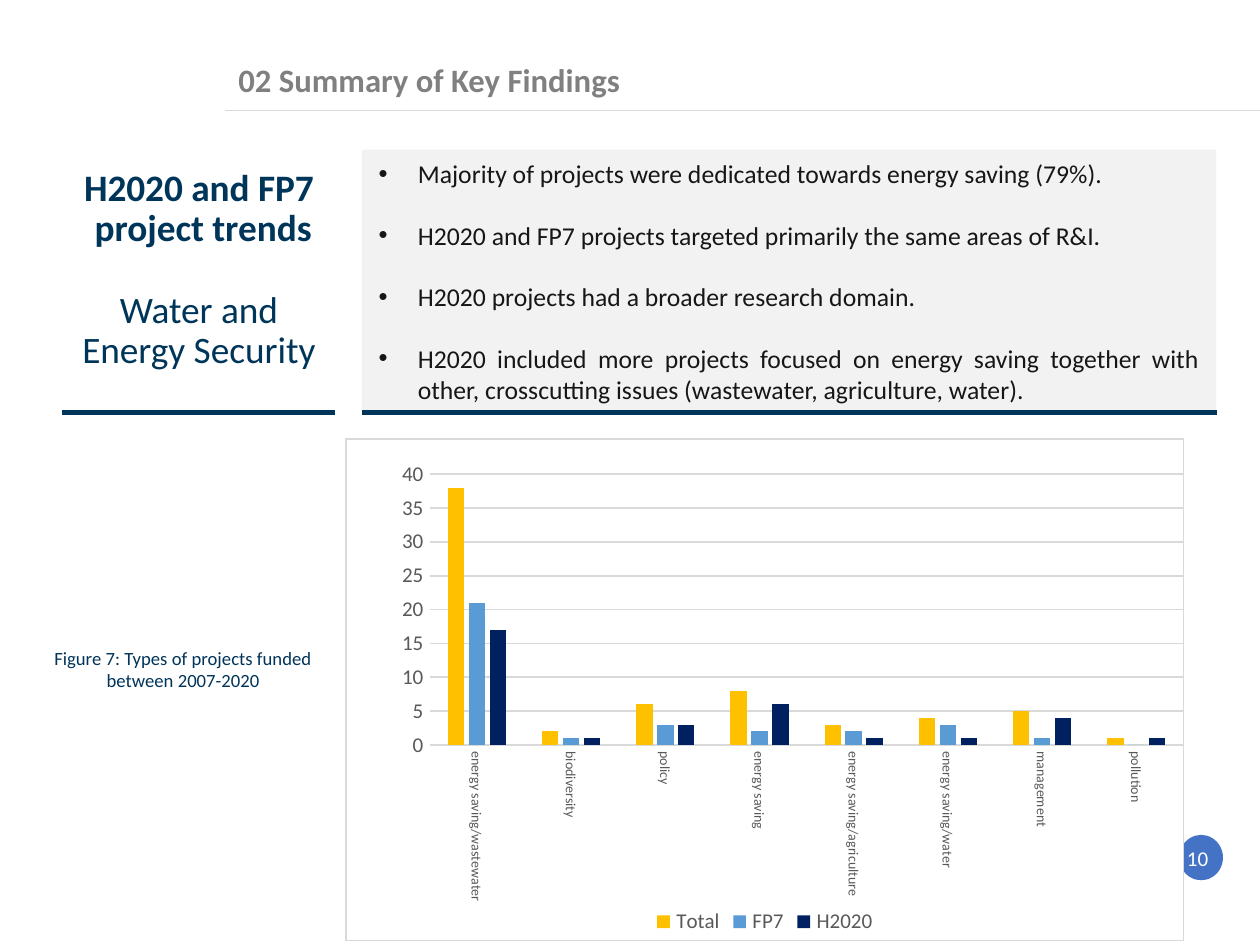
import pptx
import pptx.chart.data
import pptx.dml.color
import pptx.enum.chart
import pptx.enum.shapes
import pptx.enum.text
import pptx.oxml
import pptx.oxml.ns
import pptx.util
import lxml.etree

ALIGN = pptx.enum.text.PP_ALIGN
ANCHOR = pptx.enum.text.MSO_ANCHOR
SHAPE = pptx.enum.shapes.MSO_SHAPE
TICK = pptx.enum.chart.XL_TICK_MARK
qn = pptx.oxml.ns.qn

NAVY, GREY, RULE, INK = "00355A", "808080", "D9D9D9", "595959"
NAMESPACES = pptx.oxml.ns.nsdecls("a", "c")


def colour(value):
    return pptx.dml.color.RGBColor.from_string(value)


def cells(count):
    """Length of a number of grid cells, ten to the inch."""
    return pptx.util.Inches(count / 10)


def apply(target, values):
    for name, value in values.items():
        setattr(target, name, value)


class Page:
    """The current slide, its typeface and its grid of 75 columns."""

    typeface = "Calibri"

    def __init__(self, deck):
        self.slide = deck.slides.add_slide(deck.slide_layouts[6])
        self.shapes = self.slide.shapes

    def style_font(self, font, size, hex_colour, bold=False):
        apply(font, {"name": self.typeface, "size": pptx.util.Pt(size), "bold": bold})
        font.color.rgb = colour(hex_colour)

    def line(self, left, right, row, hex_colour, width):
        line = self.shapes.add_connector(
            pptx.enum.shapes.MSO_CONNECTOR.STRAIGHT,
            cells(left), cells(row), cells(right), cells(row))
        line.line.color.rgb = colour(hex_colour)
        line.line.width = pptx.util.Pt(width)
        lxml.etree.SubElement(line._element.spPr, qn("a:effectLst"))

    def panel(self, kind, area, fill):
        box = self.shapes.add_shape(kind, *map(cells, area))
        box.shadow.inherit = False
        box.fill.solid()
        box.fill.fore_color.rgb = colour(fill)
        box.line.fill.background()
        return box

    def text(self, area, lines, size, hex_colour, align, anchor=ANCHOR.TOP,
             spacing=1.0, gap=0, bold_lines=(), box=None, bullets=False):
        box = box or self.shapes.add_textbox(*map(cells, area))
        frame = box.text_frame
        apply(frame, {"word_wrap": True, "vertical_anchor": anchor})
        for index, words in enumerate(lines):
            para = frame.paragraphs[0] if index == 0 else frame.add_paragraph()
            if bullets:
                properties = para._p.get_or_add_pPr()
                properties.set("marL", str(cells(2.34)))
                properties.set("indent", str(-cells(2.34)))
                face = lxml.etree.SubElement(properties, qn("a:buFont"))
                face.set("typeface", "Arial")
                mark = lxml.etree.SubElement(properties, qn("a:buChar"))
                mark.set("char", "•")
            apply(para, {"alignment": align, "line_spacing": spacing,
                         "space_before": pptx.util.Pt(gap if index else 0)})
            for part, piece in enumerate(words.split("\n")):
                if part:
                    para.add_line_break()
                span = para.add_run()
                span.text = piece
                self.style_font(span.font, size, hex_colour, index in bold_lines)

    def columns(self, area, categories, series, layout):
        data = pptx.chart.data.CategoryChartData()
        data.categories = categories
        for name, (values, _) in series.items():
            data.add_series(name, values)
        chart = self.shapes.add_chart(
            pptx.enum.chart.XL_CHART_TYPE.COLUMN_CLUSTERED,
            *map(cells, area), data).chart
        apply(chart, {"has_title": False, "has_legend": True})
        self.style_font(chart.font, 10, "000000")

        # Bars
        plot = chart.plots[0]
        apply(plot, {"gap_width": 219, "overlap": -27, "vary_by_categories": False})
        for bars, (_, fill) in zip(plot.series, series.values()):
            bars.format.fill.solid()
            bars.format.fill.fore_color.rgb = colour(fill)

        # Axes and legend
        for axis, size in ((chart.category_axis, 6), (chart.value_axis, 9)):
            apply(axis, {"major_tick_mark": TICK.NONE, "minor_tick_mark": TICK.NONE})
            self.style_font(axis.tick_labels.font, size, INK)
        apply(chart.value_axis, {"minimum_scale": 0, "maximum_scale": 40,
                                 "major_unit": 5, "has_major_gridlines": True})
        chart.value_axis.format.line.fill.background()
        for part in (chart.category_axis, chart.value_axis.major_gridlines):
            part.format.line.color.rgb = colour(RULE)
            part.format.line.width = pptx.util.Pt(0.75)
        turned = chart.category_axis._element.find(qn("c:txPr")).find(qn("a:bodyPr"))
        turned.set("rot", "5400000")
        turned.set("vert", "horz")
        apply(chart.legend, {"position": pptx.enum.chart.XL_LEGEND_POSITION.BOTTOM,
                             "include_in_layout": False})
        self.style_font(chart.legend.font, 9, INK)

        # Frame and plot position
        body = chart._chartSpace.find(qn("c:chart"))
        body.addnext(pptx.oxml.parse_xml(
            f'<c:spPr {NAMESPACES}><a:solidFill><a:srgbClr val="FFFFFF"/></a:solidFill>'
            f'<a:ln w="9525"><a:solidFill><a:srgbClr val="{RULE}"/></a:solidFill></a:ln>'
            '</c:spPr>'))
        plot_area = body.find(qn("c:plotArea"))
        for old in plot_area.findall(qn("c:layout")):
            plot_area.remove(old)
        modes = '<c:layoutTarget val="inner"/><c:xMode val="edge"/><c:yMode val="edge"/>'
        sizes = "".join(f'<c:{k} val="{v}"/>' for k, v in zip("xywh", layout))
        plot_area.insert(0, pptx.oxml.parse_xml(
            f'<c:layout {NAMESPACES}><c:manualLayout>{modes}{sizes}'
            '</c:manualLayout></c:layout>'))


def main():
    deck = pptx.Presentation()
    apply(deck, {"slide_width": cells(75), "slide_height": cells(56.25)})
    page = Page(deck)

    # Header and page marker
    page.line(13.4, 75, 6.6, RULE, 0.5)
    page.panel(SHAPE.OVAL, (70.2, 49.7, 2.6, 2.7), "4472C4")
    page.text((13.2, 3.4, 35.2, 3), ["02 Summary of Key Findings"], 14, GREY,
              ALIGN.LEFT, ANCHOR.MIDDLE, 0.9, bold_lines=(0,))

    # Findings
    findings = (21.55, 8.9, 50.85, 15.75)
    page.text(findings, [
        "Majority of projects were dedicated towards energy saving (79%).",
        "H2020 and FP7 projects targeted primarily the same areas of R&I.",
        "H2020 projects had a broader research domain.",
        "H2020 included more projects focused on energy saving together with "
        "other, crosscutting issues (wastewater, agriculture, water).",
    ], 11, "171616", ALIGN.JUSTIFY, gap=13.2, bullets=True,
        box=page.panel(SHAPE.RECTANGLE, findings, "F2F2F2"))
    for left, right in ((3.7, 19.95), (21.55, 72.45)):
        page.line(left, right, 24.55, NAVY, 2.25)

    # Topic
    page.text((3.15, 9.6, 17.4, 13), ["H2020 and FP7\n project trends",
                                      "Water and Energy Security"],
              16, NAVY, ALIGN.CENTER, spacing=0.9, gap=17.6, bold_lines=(0,))
    page.text((56, 49.6, 16.9, 3), ["10"], 9, "FFFFFF", ALIGN.RIGHT, ANCHOR.MIDDLE)

    # Chart and caption
    page.columns(
        (20.55, 26.1, 49.95, 29.95),
        ["energy saving/wastewater", "biodiversity", "policy", "energy saving",
         "energy saving/agriculture", "energy saving/water", "management", "pollution"],
        {"Total": ((38, 2, 6, 8, 3, 4, 5, 1), "FFC000"),
         "FP7": ((21, 1, 3, 2, 2, 3, 1, 0), "5B9BD5"),
         "H2020": ((17, 1, 3, 6, 1, 1, 4, 1), "002060")},
        (0.1, 0.07, 0.9, 0.54))
    page.text((1.8, 38, 18.2, 3.7),
              ["Figure 7: Types of projects funded between 2007-2020"],
              8, "00345A", ALIGN.CENTER)

    deck.save("out.pptx")


if __name__ == "__main__":
    main()
